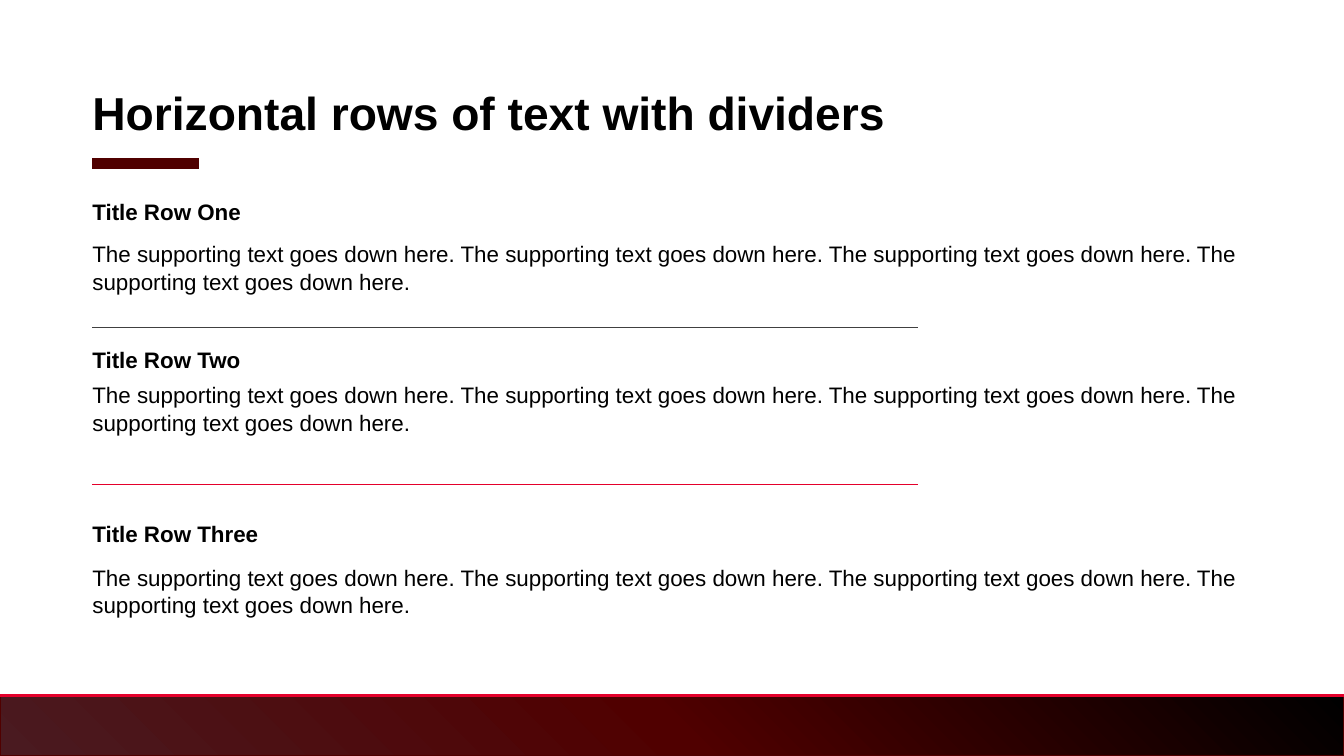
from lxml import etree
from pptx import Presentation
from pptx.dml.color import RGBColor
from pptx.enum.shapes import MSO_CONNECTOR, MSO_SHAPE
from pptx.oxml import parse_xml
from pptx.oxml.ns import nsdecls, qn
from pptx.util import Pt

COLORS = {
    "text": "000000",
    "maroon": "500000",
    "red": "E4002B",
    "gray": "404040",
    "plum": "4A1A20",
    "black": "000000",
}
SLIDE_W, SLIDE_H = 960, 540
LEFT, TEXT_W = 66, 836.64
DIVIDER_RIGHT = 656
BAND_TOP = 496.8
SUPPORT = " ".join(["The supporting text goes down here."] * 4)

# heading, heading top, support top, support height
ROWS = [
    ("Title Row One", 141.4, 170.9, 65.5),
    ("Title Row Two", 247.2, 271.7, 79.2),
    ("Title Row Three", 371.4, 402.1, 71.3),
]
DIVIDERS = [(234, "gray"), (346.3, "red")]


def rgb(name):
    return RGBColor.from_string(COLORS[name])


def add_text(slide, text, top, height, size=16, bold=False, spacing=1.0):
    box = slide.shapes.add_textbox(Pt(LEFT), Pt(top), Pt(TEXT_W), Pt(height))
    tf = box.text_frame
    tf.word_wrap = True
    tf.margin_left = tf.margin_right = tf.margin_top = tf.margin_bottom = 0
    p = tf.paragraphs[0]
    p.line_spacing = spacing
    r = p.add_run()
    r.text = text
    r.font.name = "Arial"
    r.font.size = Pt(size)
    r.font.bold = bold
    r.font.color.rgb = rgb("text")


def add_rule(slide, left, right, y, color, width):
    line = slide.shapes.add_connector(
        MSO_CONNECTOR.STRAIGHT, Pt(left), Pt(y), Pt(right), Pt(y))
    line.line.color.rgb = rgb(color)
    line.line.width = Pt(width)
    etree.SubElement(line._element.spPr, qn("a:effectLst"))


def set_gradient(sp, stops, angle):
    """Fill a shape with (percent, colour) stops; the angle runs clockwise."""
    gs = "".join(
        f'<a:gs pos="{pos * 1000}"><a:srgbClr val="{COLORS[color]}"/></a:gs>'
        for pos, color in stops)
    fill = parse_xml(
        f'<a:gradFill {nsdecls("a")} rotWithShape="1"><a:gsLst>{gs}</a:gsLst>'
        f'<a:lin ang="{angle * 60000}" scaled="0"/></a:gradFill>')
    sp._element.spPr.find(qn("a:prstGeom")).addnext(fill)


def add_footer_band(slide):
    sp = slide.shapes.add_shape(
        MSO_SHAPE.RECTANGLE, 0, Pt(BAND_TOP), Pt(SLIDE_W), Pt(SLIDE_H - BAND_TOP))
    sp.shadow.inherit = False
    set_gradient(sp, [(0, "black"), (50, "maroon"), (100, "plum")], 135)
    sp.line.color.rgb = rgb("maroon")
    sp.line.width = Pt(1.5)
    add_rule(slide, 0, SLIDE_W, BAND_TOP, "red", 1.5)


def main():
    prs = Presentation()
    prs.slide_width, prs.slide_height = Pt(SLIDE_W), Pt(SLIDE_H)
    slide = prs.slides.add_slide(prs.slide_layouts[6])

    add_rule(slide, LEFT, 142.2, 116.8, "maroon", 8)
    add_footer_band(slide)
    add_text(slide, "Horizontal rows of text with dividers", 60, 56,
             size=33, bold=True)
    for heading, heading_top, support_top, support_height in ROWS:
        add_text(slide, heading, heading_top, 24, bold=True)
        add_text(slide, SUPPORT, support_top, support_height, spacing=1.03)
    for y, color in DIVIDERS:
        add_rule(slide, LEFT, DIVIDER_RIGHT, y, color, 0.5)

    prs.save("out.pptx")


if __name__ == "__main__":
    main()
